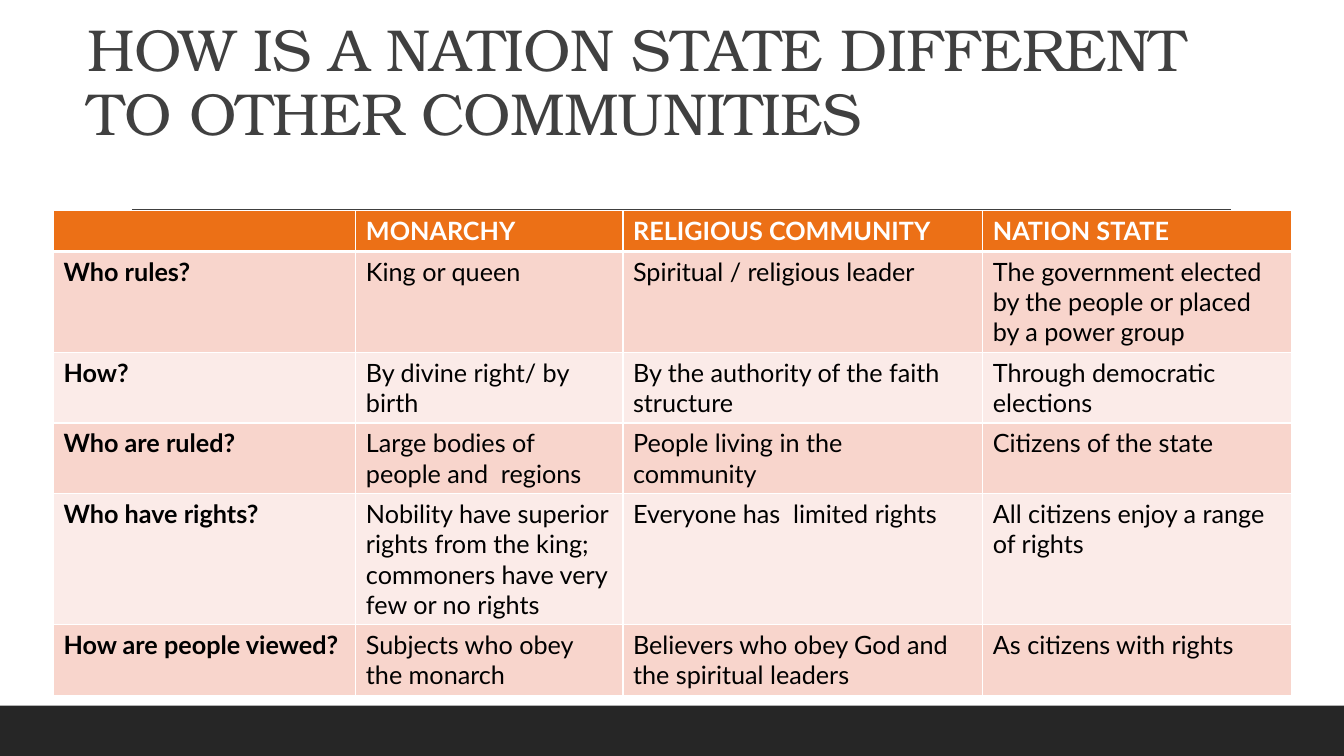
from lxml.etree import SubElement
from pptx import Presentation
from pptx.dml.color import RGBColor
from pptx.enum.shapes import MSO_CONNECTOR as Connector, MSO_SHAPE as Shape
from pptx.enum.text import MSO_ANCHOR as Anchor, MSO_AUTO_SIZE as AutoSize, PP_ALIGN as Align
from pptx.oxml import parse_xml
from pptx.oxml.ns import nsdecls, qn
from pptx.util import Pt

WHITE = RGBColor(0xFF, 0xFF, 0xFF)
BLACK = RGBColor(0, 0, 0)
GREY = RGBColor(0x40, 0x40, 0x40)
CHARCOAL = RGBColor(0x26, 0x26, 0x26)
ORANGE = RGBColor(0xEC, 0x70, 0x16)
BANDS = RGBColor(0xF8, 0xD5, 0xCC), RGBColor(0xFB, 0xEB, 0xE8)

WIDTH, HEIGHT = 960, 540
COLUMN_WIDTHS = 216, 190.8, 257, 220.3
ROW_HEIGHT = 29.2

COMPARISON = [
    ("", "MONARCHY", "RELIGIOUS COMMUNITY", "NATION STATE"),
    ("Who rules?", "King or queen", "Spiritual / religious leader",
     "The government elected by the people or placed by a power group"),
    ("How?", "By divine right/ by birth", "By the authority of the faith structure",
     "Through democratic elections"),
    ("Who are ruled?", "Large bodies of people and  regions",
     "People living in the community", "Citizens of the state"),
    ("Who have rights?",
     "Nobility have superior rights from the king; commoners have very few or no rights",
     "Everyone has  limited rights", "All citizens enjoy a range of rights"),
    ("How are people viewed?", "Subjects who obey the monarch",
     "Believers who obey God and the spiritual leaders", "As citizens with rights"),
]


def write(frame, text, font="Lato", size=18, color=BLACK, bold=False,
          line_spacing=None, tracking=None):
    """Put one formatted, left-aligned paragraph in a text frame."""
    para = frame.paragraphs[0]
    para.alignment = Align.LEFT
    para.line_spacing = line_spacing
    span = para.add_run()
    span.text = text
    span.font.name, span.font.size, span.font.bold = font, Pt(size), bold
    span.font.color.rgb = color
    if tracking is not None:
        span.font._element.set("spc", str(round(tracking * 100)))


class Slide:
    """Holds the style and the current slide; all lengths are points."""

    title_font = "TeX Gyre Bonum"
    border_color = WHITE

    def __init__(self, page):
        self.page = page

    def bar(self, left, top, width, height, color):
        box = self.page.shapes.add_shape(
            Shape.RECTANGLE, Pt(left), Pt(top), Pt(width), Pt(height))
        box.shadow.inherit = False
        box.fill.solid()
        box.fill.fore_color.rgb = color
        box.line.fill.background()

    def rule(self, left, right, top, color, weight=1):
        line = self.page.shapes.add_connector(
            Connector.STRAIGHT, Pt(left), Pt(top), Pt(right), Pt(top))
        line.line.color.rgb = color
        line.line.width = Pt(weight)
        SubElement(line._element.spPr, qn("a:effectLst"))

    def title(self, text, left, top, width, height):
        box = self.page.shapes.title
        box.left, box.top, box.width, box.height = map(Pt, (left, top, width, height))
        frame = box.text_frame
        frame.word_wrap = True
        frame.auto_size = AutoSize.NONE
        frame.vertical_anchor = Anchor.BOTTOM
        write(frame, text, font=self.title_font, size=42.3, color=GREY,
              line_spacing=0.9, tracking=-0.5)

    def borders(self, cell, **weights):
        properties = cell._tc.get_or_add_tcPr()
        for place, side in enumerate("LRTB"):
            properties.insert(place, parse_xml(
                f'<a:ln{side} {nsdecls("a")} w="{Pt(weights.get(side, 1))}">'
                f'<a:solidFill><a:srgbClr val="{self.border_color}"/></a:solidFill>'
                f'</a:ln{side}>'))

    def table(self, rows, left, top, column_widths, row_height):
        grid = self.page.shapes.add_table(
            len(rows), len(column_widths), Pt(left), Pt(top),
            Pt(sum(column_widths)), Pt(row_height * len(rows))).table
        for column, width in zip(grid.columns, column_widths):
            column.width = Pt(width)
        for r, texts in enumerate(rows):
            header = r == 0
            for c, text in enumerate(texts):
                cell = grid.cell(r, c)
                cell.fill.solid()
                cell.fill.fore_color.rgb = ORANGE if header else BANDS[(r - 1) % 2]
                # The heavier rule lies between the header and the first row
                self.borders(cell, B=3 if header else 1, T=3 if r == 1 else 1)
                write(cell.text_frame, text, color=WHITE if header else BLACK,
                      bold=header or c == 0)


def main():
    deck = Presentation()
    deck.slide_width, deck.slide_height = Pt(WIDTH), Pt(HEIGHT)
    slide = Slide(deck.slides.add_slide(deck.slide_layouts[5]))

    # Footer band and rule under the title
    slide.bar(0, 504, WIDTH, 36, CHARCOAL)
    slide.rule(94.3, 879, 149.5, GREY)

    # Title
    slide.title("HOW IS A NATION STATE DIFFERENT TO OTHER COMMUNITIES",
                55.4, 22.3, 823, 87.1)

    # Comparison table
    slide.table(COMPARISON, 38.2, 150.5, COLUMN_WIDTHS, ROW_HEIGHT)

    deck.save("out.pptx")


if __name__ == "__main__":
    main()
